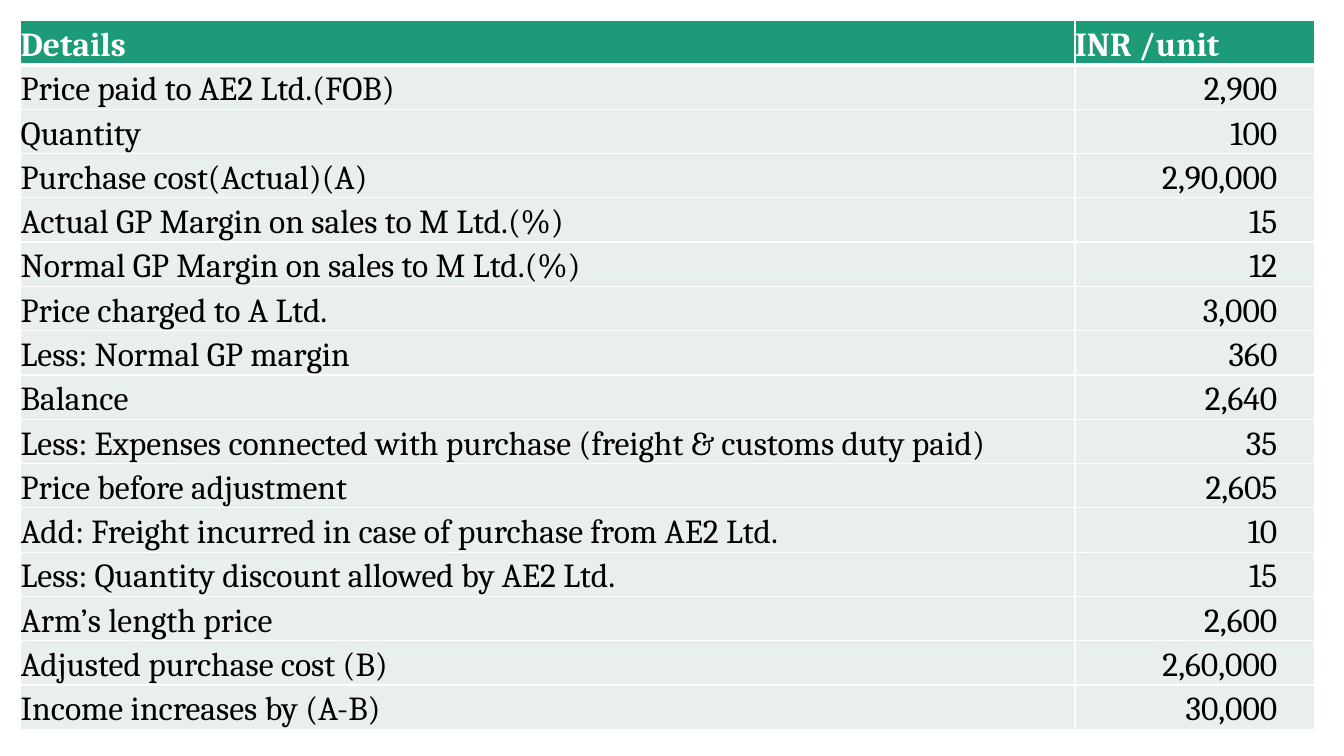
from lxml.etree import SubElement
from pptx import Presentation
from pptx.dml.color import RGBColor
from pptx.enum.text import MSO_ANCHOR, PP_ALIGN
from pptx.oxml.ns import qn
from pptx.util import Cm, Pt

WHITE, BLACK, GREEN, PALE = "FFFFFF", "000000", "1D9A78", "E8EFEC"
HEADINGS = ("Details", "INR /unit")
COSTS = [
    ("Price paid to AE2 Ltd.(FOB)", "2,900"),
    ("Quantity", "100"),
    ("Purchase cost(Actual)(A)", "2,90,000"),
    ("Actual GP Margin on sales to M Ltd.(%)", "15"),
    ("Normal GP Margin on sales to M Ltd.(%)", "12"),
    ("Price charged to A Ltd.", "3,000"),
    ("Less: Normal GP margin", "360"),
    ("Balance", "2,640"),
    ("Less: Expenses connected with purchase (freight & customs duty paid)", "35"),
    ("Price before adjustment", "2,605"),
    ("Add: Freight incurred in case of purchase from AE2 Ltd.", "10"),
    ("Less: Quantity discount allowed by AE2 Ltd.", "15"),
    ("Arm’s length price", "2,600"),
    ("Adjusted purchase cost (B)", "2,60,000"),
    ("Income increases by (A-B)", "30,000"),
]


def color(hex_value):
    return RGBColor.from_string(hex_value)


def set_borders(cell, top=1, bottom=1):
    properties = cell._tc.get_or_add_tcPr()
    for side, width in (("L", 1), ("R", 1), ("T", top), ("B", bottom)):
        line = SubElement(properties, qn(f"a:ln{side}"), w=str(Pt(width)))
        fill = SubElement(line, qn("a:solidFill"))
        SubElement(fill, qn("a:srgbClr"), val=WHITE)


def fill_cell(cell, text, background, ink, bold=False):
    cell.margin_left = cell.margin_right = cell.margin_top = cell.margin_bottom = 0
    cell.vertical_anchor = MSO_ANCHOR.BOTTOM
    cell.fill.solid()
    cell.fill.fore_color.rgb = color(background)
    cell.text = text
    paragraph = cell.text_frame.paragraphs[0]
    paragraph.font.name = "Cambria"
    paragraph.font.size = Pt(24)
    paragraph.font.bold = bold
    paragraph.font.color.rgb = color(ink)


def add_heading(cell, text):
    set_borders(cell, bottom=3)
    fill_cell(cell, text, GREEN, WHITE, bold=True)


def add_entry(cell, text, top):
    set_borders(cell, top=top)
    fill_cell(cell, text, PALE, BLACK)


def add_amount(cell, text, top):
    add_entry(cell, text, top)
    cell.margin_right = Cm(0.95)
    cell.text_frame.paragraphs[0].alignment = PP_ALIGN.RIGHT


def add_price_table(slide):
    row_count = len(COSTS) + 1
    prices = slide.shapes.add_table(
        row_count, 2, Cm(0.52), Cm(0.52), Cm(32.62), Cm(17.86)
    ).table
    prices.columns[0].width = Cm(26.57)
    prices.columns[1].width = Cm(6.05)
    for column, heading in enumerate(HEADINGS):
        add_heading(prices.cell(0, column), heading)
    for row, (detail, amount) in enumerate(COSTS, start=1):
        top = 3 if row == 1 else 1
        add_entry(prices.cell(row, 0), detail, top)
        add_amount(prices.cell(row, 1), amount, top)


def main():
    deck = Presentation()
    deck.slide_width, deck.slide_height = Cm(33.87), Cm(19.05)
    slide = deck.slides.add_slide(deck.slide_layouts[6])
    add_price_table(slide)
    deck.save("out.pptx")


if __name__ == "__main__":
    main()
